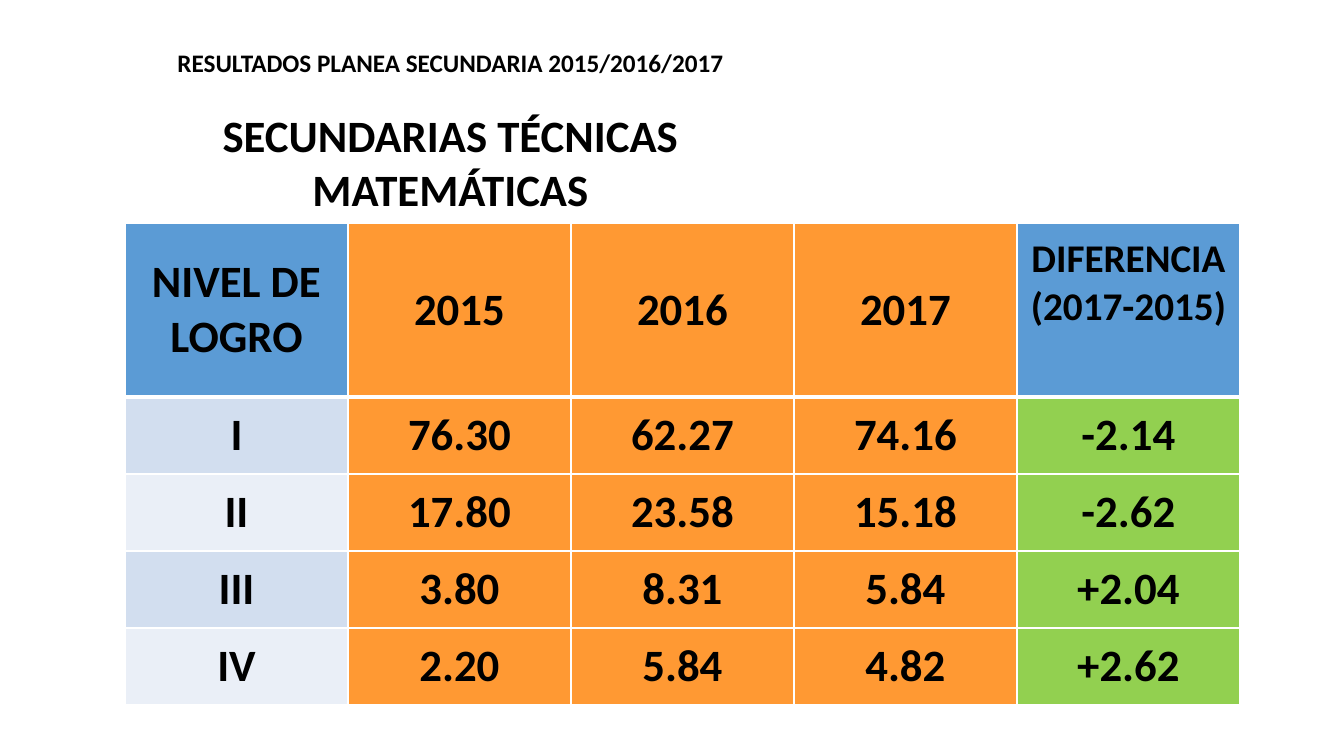
from lxml.etree import SubElement
from pptx import Presentation
from pptx.dml.color import RGBColor
from pptx.enum.text import MSO_ANCHOR as Anchor, MSO_AUTO_SIZE as AutoSize, PP_ALIGN as Align
from pptx.oxml.ns import qn
from pptx.util import Emu, Pt

BLACK = RGBColor(0x00, 0x00, 0x00)
WHITE = RGBColor(0xFF, 0xFF, 0xFF)
BLUE = RGBColor(0x5B, 0x9B, 0xD5)
ORANGE = RGBColor(0xFF, 0x99, 0x33)
GREEN = RGBColor(0x92, 0xD0, 0x50)
LEVEL_BANDS = (RGBColor(0xD2, 0xDE, 0xEF), RGBColor(0xEA, 0xEF, 0xF7))

FONT = "Calibri"
COLUMN_WIDTH = 223
HEADER_HEIGHT = 174
ROW_HEIGHT = 77

TITLE = "RESULTADOS PLANEA SECUNDARIA 2015/2016/2017\nSECUNDARIAS TÉCNICAS\nMATEMÁTICAS"
RESULTS = (
    ("NIVEL DE LOGRO", "2015", "2016", "2017", "DIFERENCIA\n(2017-2015)"),
    ("I", "76.30", "62.27", "74.16", "-2.14"),
    ("II", "17.80", "23.58", "15.18", "-2.62"),
    ("III", "3.80", "8.31", "5.84", "+2.04"),
    ("IV", "2.20", "5.84", "4.82", "+2.62"),
)


def px(length):
    """Turn slide pixels into EMU."""
    return Emu(round(length * 914400 / 100.8))


def format_text(text_frame, size):
    """Centre every paragraph and set bold black runs."""
    for paragraph in text_frame.paragraphs:
        paragraph.alignment = Align.CENTER
        paragraph.line_spacing = 1.0
        for run in paragraph.runs:
            run.font.name = FONT
            run.font.size = Pt(size)
            run.font.bold = True
            run.font.color.rgb = BLACK


def add_title(slide):
    """Place the three-line heading in the title placeholder."""
    title = slide.shapes.title
    title.left, title.top, title.width, title.height = px(101), px(42), px(699), px(179)
    text_frame = title.text_frame
    text_frame.text = TITLE
    text_frame.word_wrap = True
    text_frame.auto_size = AutoSize.NONE
    text_frame.vertical_anchor = Anchor.TOP
    format_text(text_frame, 32)
    heading = text_frame.paragraphs[0]
    heading.runs[0].font.size = Pt(18)
    heading.space_after = Pt(22)


def set_borders(cell, top, bottom):
    """Draw white cell borders with the given top and bottom widths."""
    properties = cell._tc.get_or_add_tcPr()
    for side, width in (("L", 1), ("R", 1), ("T", top), ("B", bottom)):
        line = SubElement(properties, qn(f"a:ln{side}"), w=str(Pt(width)))
        fill = SubElement(line, qn("a:solidFill"))
        SubElement(fill, qn("a:srgbClr"), val=str(WHITE))


def cell_color(row, column):
    """Choose a cell fill from its place in the table."""
    if 0 < column < 4:
        return ORANGE
    if row == 0:
        return BLUE
    return GREEN if column == 4 else LEVEL_BANDS[(row - 1) % 2]


def add_results_table(slide):
    """Add the table of results by achievement level."""
    rows, columns = len(RESULTS), len(RESULTS[0])
    height = HEADER_HEIGHT + ROW_HEIGHT * (rows - 1)
    frame = slide.shapes.add_table(
        rows, columns, px(125), px(223), px(COLUMN_WIDTH * columns), px(height)
    )
    table = frame.table
    for column in table.columns:
        column.width = px(COLUMN_WIDTH)
    for row_index, values in enumerate(RESULTS):
        table.rows[row_index].height = px(ROW_HEIGHT if row_index else HEADER_HEIGHT)
        for column_index, value in enumerate(values):
            cell = table.cell(row_index, column_index)
            cell.text_frame.text = value
            cell.vertical_anchor = Anchor.MIDDLE
            format_text(cell.text_frame, 32)
            set_borders(cell, 3 if row_index == 1 else 1, 3 if row_index == 0 else 1)
            cell.fill.solid()
            cell.fill.fore_color.rgb = cell_color(row_index, column_index)
    difference = table.cell(0, columns - 1)
    difference.margin_bottom = px(59)
    format_text(difference.text_frame, 28)


def main():
    """Build and save the slide."""
    presentation = Presentation()
    presentation.slide_width, presentation.slide_height = px(1344), px(756)
    slide = presentation.slides.add_slide(presentation.slide_layouts[5])
    add_title(slide)
    add_results_table(slide)
    presentation.save("out.pptx")


if __name__ == "__main__":
    main()
